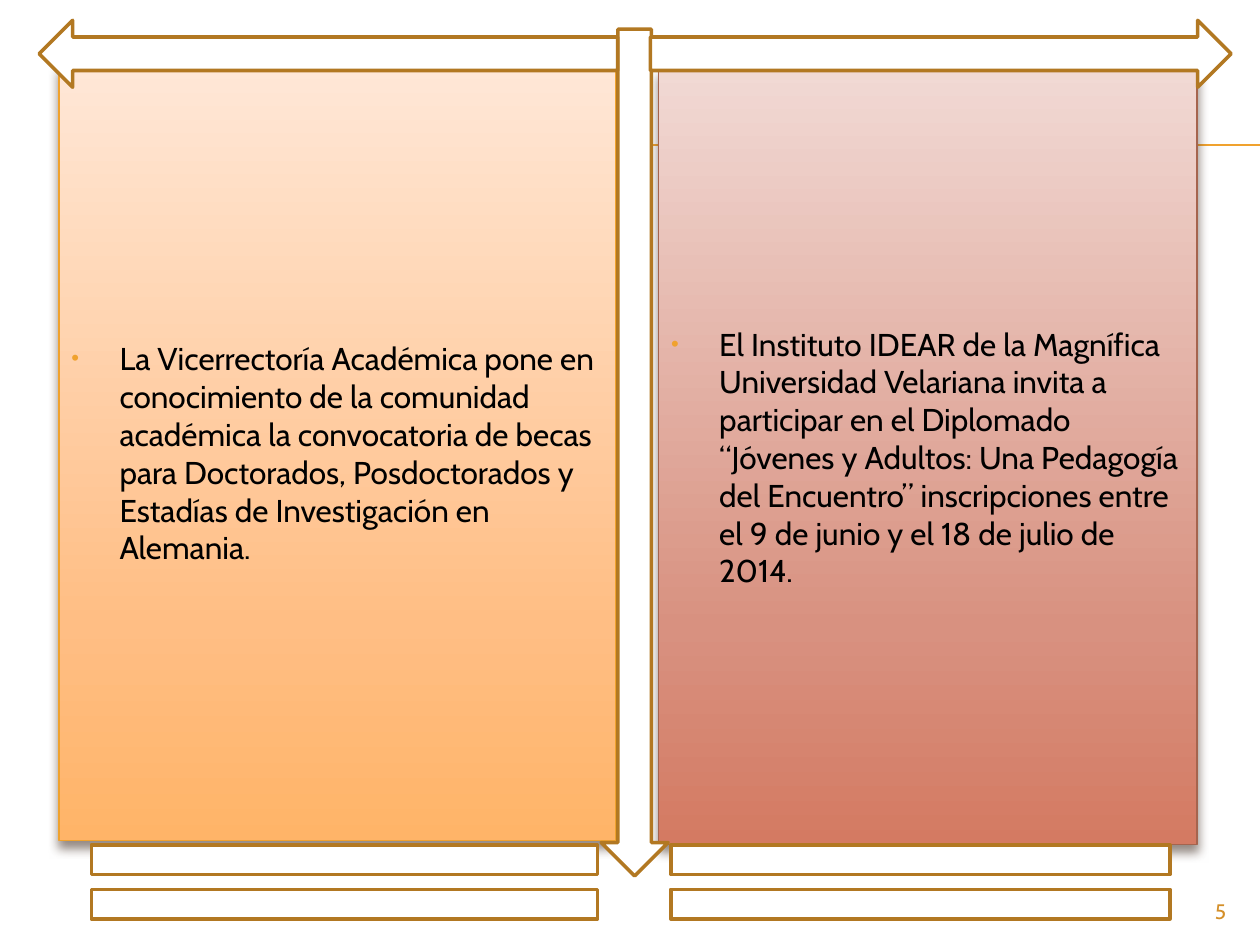
from copy import deepcopy

from lxml import etree
from pptx import Presentation
from pptx import util as u
from pptx.dml.color import RGBColor
from pptx.enum import shapes, text
from pptx.oxml import ns

FONT = "Cabin"
BLACK = RGBColor(0x00, 0x00, 0x00)
WHITE = RGBColor(0xFF, 0xFF, 0xFF)
AMBER = RGBColor(0xF0, 0xA2, 0x2E)
DARK_AMBER = RGBColor(0xB2, 0x78, 0x22)
NUMBER_AMBER = RGBColor(0xD4, 0x8F, 0x29)
RUST = RGBColor(0xA5, 0x64, 0x4E)
BROWN = RGBColor(0x4E, 0x3B, 0x30)
ORANGE_FADE = (RGBColor(0xFF, 0xE7, 0xD7), RGBColor(0xFF, 0xBE, 0x84), RGBColor(0xFF, 0xB4, 0x68))
RED_FADE = (RGBColor(0xF1, 0xD9, 0xD4), RGBColor(0xD8, 0x91, 0x80), RGBColor(0xD4, 0x7A, 0x62))
FADE_POSITIONS = (0, 0.72, 1)

GRANTS = (
    "La Vicerrectoría Académica pone en conocimiento de la comunidad académica la "
    "convocatoria de becas para Doctorados, Posdoctorados y Estadías de Investigación en Alemania."
)
DIPLOMA = (
    "El Instituto IDEAR de la Magnífica Universidad Velariana invita a participar en el "
    "Diplomado “Jóvenes y Adultos: Una Pedagogía del Encuentro” inscripciones entre el "
    "9 de junio y el 18 de julio de 2014."
)


def set_all(target, values):
    for name, value in values.items():
        setattr(target, name, value)


def add_element(parent, tag, **attributes):
    return etree.SubElement(parent, ns.qn(tag), attributes)


def add_color(parent, color):
    return add_element(parent, "a:srgbClr", val=str(color))


def add_outlined(slide, kind, box, line_color, line_width):
    shape = slide.shapes.add_shape(kind, *map(u.Cm, box))
    shape.shadow.inherit = False
    shape.line.color.rgb = line_color
    shape.line.width = u.Pt(line_width)
    return shape


def add_fade(shape, colors):
    shape.fill.gradient()
    shape.fill.gradient_angle = 270
    stop_list = shape._element.spPr.find(".//" + ns.qn("a:gsLst"))
    stop_list.append(deepcopy(stop_list[-1]))
    for stop, position, color in zip(shape.fill.gradient_stops, FADE_POSITIONS, colors):
        stop.position = position
        stop.color.rgb = color


def add_shadow(shape):
    effects = shape._element.spPr.find(ns.qn("a:effectLst"))
    shadow = add_element(
        effects, "a:outerShdw", blurRad=str(u.Pt(6)), dist=str(u.Pt(4)),
        dir="5400000", rotWithShape="0",
    )
    add_element(add_color(shadow, BROWN), "a:alpha", val="60000")


def add_bullet(paragraph):
    properties = paragraph._p.get_or_add_pPr()
    indent = u.Cm(0.97)
    properties.set("marL", str(indent))
    properties.set("indent", str(-indent))
    add_color(add_element(properties, "a:buClr"), AMBER)
    add_element(properties, "a:buSzPct", val="70000")
    add_element(properties, "a:buFont", typeface="Arial")
    add_element(properties, "a:buChar", char="•")


def write(paragraph, words, size, color, alignment):
    set_all(paragraph, {"alignment": alignment})
    run = paragraph.add_run()
    run.text = words
    set_all(run.font, {"name": FONT, "size": u.Pt(size)})
    run.font.color.rgb = color


def add_rule(slide, box):
    left, top, width, gap = box
    for y in (top, top + gap):
        rule = slide.shapes.add_connector(
            shapes.MSO_CONNECTOR.STRAIGHT, *map(u.Cm, (left, y, left + width, y))
        )
        rule.line.color.rgb = AMBER
        rule.line.width = u.Pt(0.75)
        add_element(rule._element.spPr, "a:effectLst")


def add_panel(slide, box, words, fade, line_color):
    panel = add_outlined(slide, shapes.MSO_SHAPE.RECTANGLE, box, line_color, 0.79)
    add_fade(panel, fade)
    add_shadow(panel)
    frame = panel.text_frame
    set_all(frame, {"word_wrap": True, "vertical_anchor": text.MSO_ANCHOR.MIDDLE})
    paragraph = frame.paragraphs[0]
    paragraph.space_before = u.Pt(3.6)
    add_bullet(paragraph)
    write(paragraph, words, 18, BLACK, text.PP_ALIGN.LEFT)


def add_frame(slide, box):
    left, top, width, height = box
    kinds = shapes.MSO_SHAPE
    arrow_width = 11.71
    parts = (
        (kinds.DOWN_ARROW, (11.33, 0.18, 1.35, 17.07)),
        (kinds.RIGHT_ARROW, (width - arrow_width, 0, arrow_width, 1.35)),
        (kinds.LEFT_ARROW, (0, 0, 11.66, 1.35)),
        (kinds.MATH_EQUAL, (-left, height - 2.54, 13.89, 2.54)),
        (kinds.MATH_EQUAL, (10.92, height - 2.54, 13.69, 2.54)),
    )
    for kind, (x, y, part_width, part_height) in parts:
        shape = add_outlined(
            slide, kind, (left + x, top + y, part_width, part_height), DARK_AMBER, 2
        )
        shape.fill.solid()
        shape.fill.fore_color.rgb = WHITE


def add_page_number(slide, box, number):
    frame = slide.shapes.add_textbox(*map(u.Cm, box)).text_frame
    frame.word_wrap = True
    write(frame.paragraphs[0], number, 12, NUMBER_AMBER, text.PP_ALIGN.RIGHT)


def main():
    presentation = Presentation()
    set_all(presentation, {"slide_width": u.Cm(25.4), "slide_height": u.Cm(19.05)})
    slide = presentation.slides.add_slide(presentation.slide_layouts[6])
    add_rule(slide, (1.42, 2.92, 23.98, 0.02))
    add_panel(slide, (1.19, 1.32, 11.23, 15.62), GRANTS, ORANGE_FADE, AMBER)
    add_panel(slide, (13.28, 1.4, 10.85, 15.62), DIPLOMA, RED_FADE, RUST)
    add_frame(slide, (0.79, 0.41, 24.03, 18.64))
    add_page_number(slide, (22.86, 17.98, 2.11, 0.69), "5")
    presentation.save("out.pptx")


if __name__ == "__main__":
    main()
